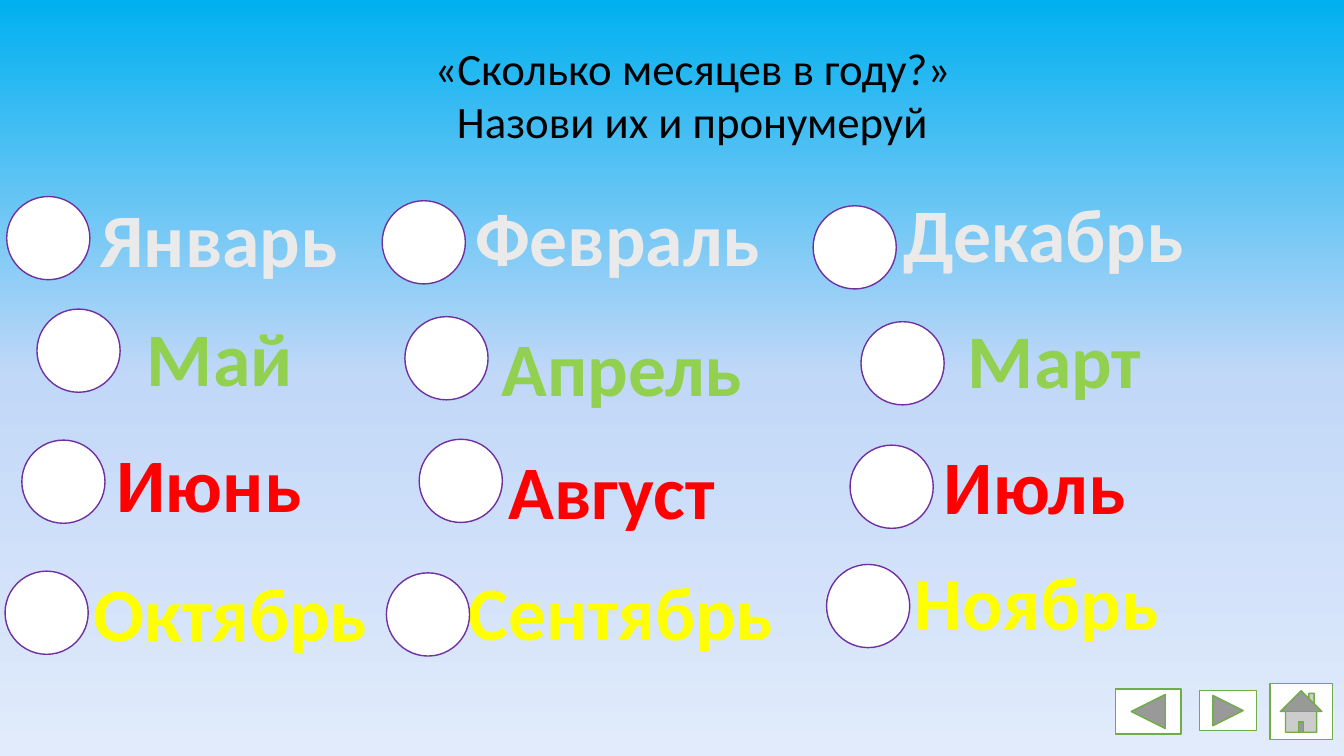
from copy import deepcopy

from lxml.etree import SubElement
from pptx import Presentation
from pptx.dml.color import RGBColor
from pptx.enum.shapes import MSO_SHAPE
from pptx.enum.text import MSO_ANCHOR, MSO_AUTO_SIZE, PP_ALIGN
from pptx.oxml.ns import qn
from pptx.util import Inches, Pt

COLORS = {
    "sky": "00B0F0", "haze": "C2D8F8", "horizon": "E1EBFB",
    "white": "FFFFFF", "black": "000000", "purple": "7030A0", "green": "70AD47",
    "winter": "EBEAEA", "winter edge": "3A5274",
    "spring": "92D050", "spring edge": "00B050",
    "summer": "FF0000", "summer edge": "FF0000",
    "autumn": "FFFF00", "autumn edge": "FFC000",
}
TITLE = "«Сколько месяцев в году?»\nНазови их и пронумеруй"

SEASONS = {
    "winter": [
        ("Январь", (0.08, 2.34), (1.06, 2.22), 3.1),
        ("Февраль", (4.55, 2.39), (5.52, 2.21), 3.67),
        ("Декабрь", (9.68, 2.45), (10.62, 2.17), 3.61),
    ],
    "spring": [
        ("Май", (0.44, 3.68), (1.62, 3.64), 1.99),
        ("Апрель", (4.82, 3.77), (5.84, 3.76), 3.13),
        ("Март", (10.25, 3.83), (11.39, 3.67), 2.33),
    ],
    "summer": [
        ("Июнь", (0.26, 5.24), (1.26, 5.14), 2.46),
        ("Август", (4.99, 5.23), (5.92, 5.22), 2.72),
        ("Июль", (10.12, 5.3), (11.1, 5.16), 2.44),
    ],
    "autumn": [
        ("Октябрь", (0.06, 6.8), (0.98, 6.68), 3.53),
        ("Сентябрь", (4.6, 6.82), (5.11, 6.67), 4.57),
        ("Ноябрь", (9.84, 6.72), (10.75, 6.55), 3.18),
    ],
}
BUTTONS = [
    (MSO_SHAPE.ACTION_BUTTON_HOME, (15.12, 8.14), (0.74, 0.66)),
    (MSO_SHAPE.ACTION_BUTTON_BACK_OR_PREVIOUS, (13.28, 8.2), (0.78, 0.54)),
    (MSO_SHAPE.ACTION_BUTTON_FORWARD_OR_NEXT, (14.28, 8.22), (0.68, 0.48)),
]


class MonthSlide:
    columns, rows = 16, 9
    font = "Calibri"

    def __init__(self, deck):
        self.deck = deck
        self.slide = deck.slides.add_slide(deck.slide_layouts[5])

    def place(self, position, size):
        column, row = self.deck.slide_width / self.columns, self.deck.slide_height / self.rows
        return (round(position[0] * column), round(position[1] * row),
                round(size[0] * column), round(size[1] * row))

    def color(self, name):
        return RGBColor.from_string(COLORS[name])

    def background(self, names):
        fill = self.slide.background.fill
        fill.gradient()
        fill.gradient_angle = 270
        stop_list = self.slide.element.find(".//" + qn("a:gsLst"))
        stop_list.append(deepcopy(stop_list[-1]))
        for index, (stop, name) in enumerate(zip(fill.gradient_stops, names)):
            stop.position = index / (len(names) - 1)
            stop.color.rgb = self.color(name)

    def set_text(self, frame, text, size, color, bold=False):
        frame.text = text
        frame.word_wrap = False
        frame.auto_size = MSO_AUTO_SIZE.NONE
        frame.vertical_anchor = MSO_ANCHOR.TOP
        for paragraph in frame.paragraphs:
            paragraph.alignment = PP_ALIGN.CENTER
            paragraph.line_spacing = 1.0
            for span in paragraph.runs:
                span.font.name = self.font
                span.font.size = Pt(size)
                span.font.bold = bold
                span.font.color.rgb = self.color(color)

    def title(self, text, position, size):
        title = self.slide.shapes.title
        title.left, title.top, title.width, title.height = self.place(position, size)
        self.set_text(title.text_frame, text, 32, "black")

    def month(self, name, season, position, width):
        box = self.slide.shapes.add_textbox(*self.place(position, (width, 1.21)))
        self.set_text(box.text_frame, name, 54, season, bold=True)
        properties = box.text_frame.paragraphs[0].runs[0].font._element
        outline = SubElement(properties, qn("a:ln"), w=str(Pt(1 if season == "winter" else 1.42)))
        paint = SubElement(outline, qn("a:solidFill"))
        SubElement(paint, qn("a:srgbClr"), val=COLORS[season + " edge"])
        properties.insert(0, outline)

    def shape(self, kind, position, size, line):
        shape = self.slide.shapes.add_shape(kind, *self.place(position, size))
        shape.shadow.inherit = False
        shape.fill.solid()
        shape.fill.fore_color.rgb = self.color("white")
        shape.line.color.rgb = self.color(line)
        shape.line.width = Pt(1)


def main():
    deck = Presentation()
    deck.slide_width, deck.slide_height = Inches(13.33), Inches(7.5)
    page = MonthSlide(deck)
    page.background(["sky", "haze", "horizon"])
    page.title(TITLE, (5.04, 0.42), (6.41, 1.42))
    for kind, position, size in BUTTONS:
        page.shape(kind, position, size, "green")
    for season, months in SEASONS.items():
        for name, circle, label, width in months:
            page.month(name, season, label, width)
            page.shape(MSO_SHAPE.OVAL, circle, (0.99, 0.99), "purple")
    deck.save("out.pptx")


if __name__ == "__main__":
    main()
